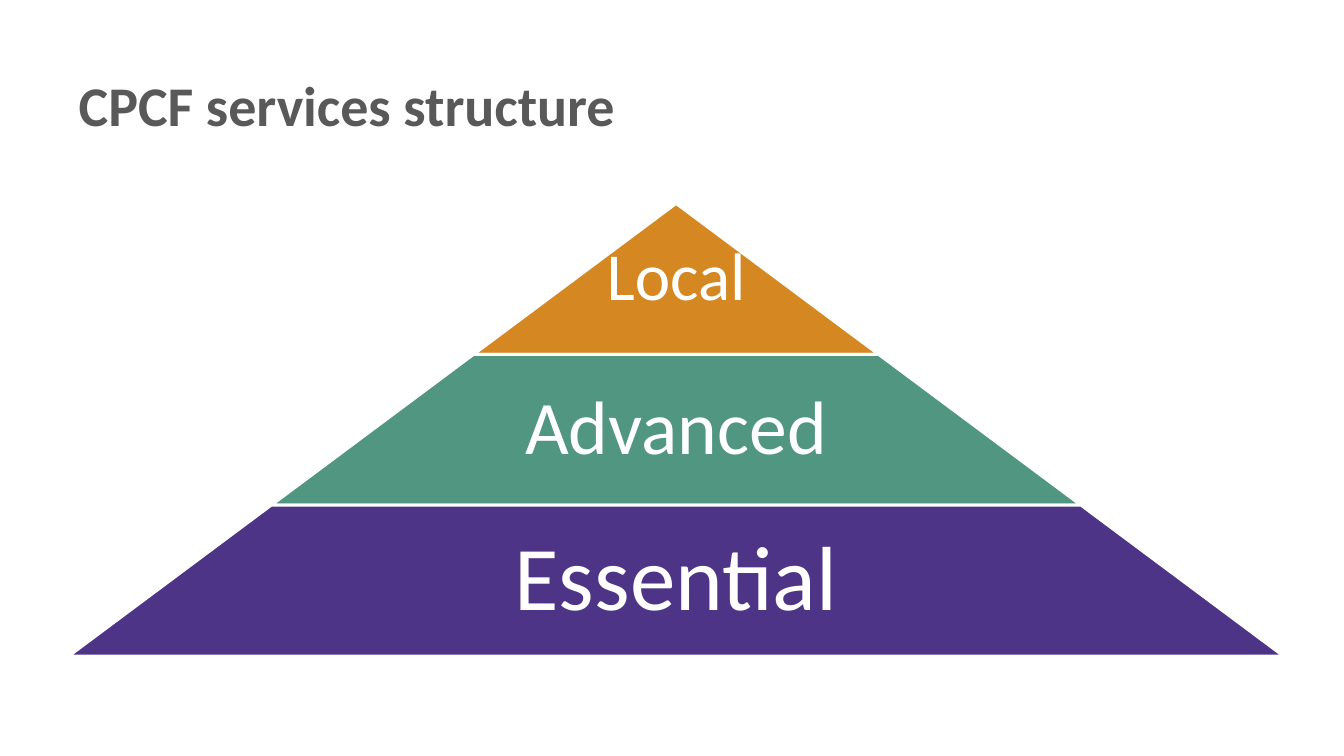
from pptx import Presentation
from pptx.dml.color import RGBColor
from pptx.enum.shapes import MSO_SHAPE
from pptx.enum.text import MSO_ANCHOR, MSO_AUTO_SIZE, PP_ALIGN
from pptx.util import Cm, Pt

CENTRE = 17.04
TOP = 5.13
TIER_HEIGHT = 3.8
TIER_STEP = 10.2
TIERS = [
    ("Local", "D58721", 48, 1, 0.18),
    ("Advanced", "519680", 54, 0.65, 0.18),
    ("Essential", "4E3487", 65, 0.65, 0.23),
]


def rgb(value):
    return RGBColor.from_string(value)


def write(tf, text, size, color, bold=False, align=PP_ALIGN.LEFT, spacing=0.9):
    tf.word_wrap = True
    tf.auto_size = MSO_AUTO_SIZE.NONE
    tf.vertical_anchor = MSO_ANCHOR.MIDDLE
    p = tf.paragraphs[0]
    p.alignment = align
    p.line_spacing = spacing
    r = p.add_run()
    r.text = text
    r.font.name = "Calibri"
    r.font.size = Pt(size)
    r.font.bold = bold
    r.font.color.rgb = rgb(color)


def add_title(s, text):
    sp = s.shapes.title
    sp.left, sp.top, sp.width, sp.height = Cm(1.73), Cm(0.74), Cm(27.4), Cm(3.96)
    write(sp.text_frame, text, size=40, color="595959", bold=True)


def add_band(s, left, top, width, fill):
    sp = s.shapes.add_shape(
        MSO_SHAPE.TRAPEZOID, Cm(left), Cm(top), Cm(width), Cm(TIER_HEIGHT))
    sp.adjustments[0] = TIER_STEP / 2 / TIER_HEIGHT
    sp.shadow.inherit = False
    sp.fill.solid()
    sp.fill.fore_color.rgb = rgb(fill)
    sp.line.color.rgb = rgb("FFFFFF")
    sp.line.width = Pt(2)


def add_label(s, left, top, width, text, size, inset):
    sp = s.shapes.add_textbox(Cm(left), Cm(top), Cm(width), Cm(TIER_HEIGHT))
    tf = sp.text_frame
    tf.margin_left = tf.margin_right = Cm(inset)
    tf.margin_top = tf.margin_bottom = Cm(inset)
    write(tf, text, size=size, color="FFFFFF", align=PP_ALIGN.CENTER)


def add_pyramid(s):
    for i, (text, fill, size, share, inset) in enumerate(TIERS):
        top = TOP + i * TIER_HEIGHT
        width = (i + 1) * TIER_STEP
        label_width = width * share
        add_band(s, CENTRE - width / 2, top, width, fill)
        add_label(s, CENTRE - label_width / 2, top, label_width, text, size, inset)


def main():
    prs = Presentation()
    prs.slide_width, prs.slide_height = Cm(33.87), Cm(19.05)
    s = prs.slides.add_slide(prs.slide_layouts[5])
    add_title(s, "CPCF services structure")
    add_pyramid(s)
    prs.save("out.pptx")


if __name__ == "__main__":
    main()
